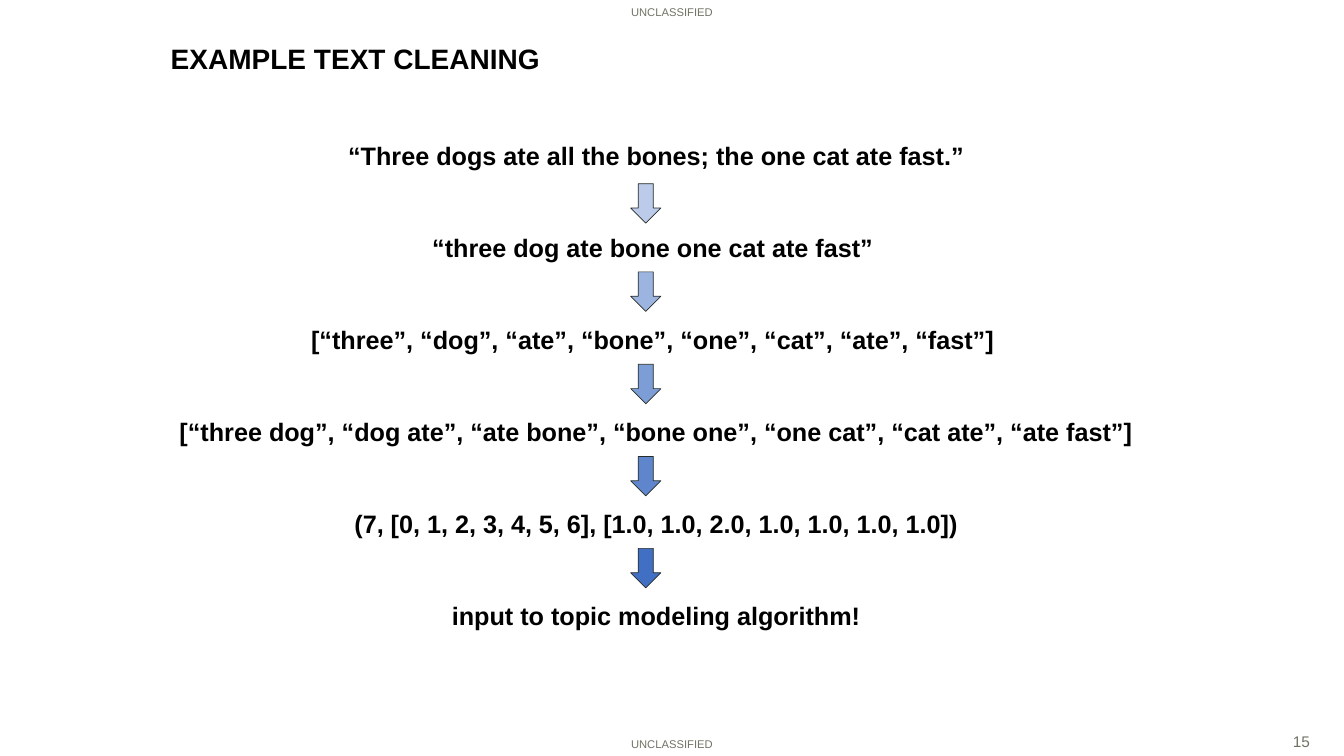
from pptx import Presentation
from pptx.dml.color import RGBColor
from pptx.enum.shapes import MSO_SHAPE
from pptx.enum.text import MSO_ANCHOR as ANCHOR, MSO_AUTO_SIZE as AUTO_SIZE, PP_ALIGN as ALIGN
from pptx.util import Pt

SLIDE_WIDTH, SLIDE_HEIGHT = 960, 540
BLACK, GREY, ARROW_LINE = "000000", "717365", "262C26"

TITLE = "EXAMPLE TEXT CLEANING"
MARKING = "UNCLASSIFIED"
PAGE_NUMBER = "15"
STEPS = [
    "“Three dogs ate all the bones; the one cat ate fast.”",
    "“three dog ate bone one cat ate fast” ",
    "[“three”, “dog”, “ate”, “bone”, “one”, “cat”, “ate”, “fast”] ",
    "[“three dog”, “dog ate”, “ate bone”, “bone one”, “one cat”, “cat ate”, “ate fast”]",
    "(7, [0, 1, 2, 3, 4, 5, 6], [1.0, 1.0, 2.0, 1.0, 1.0, 1.0, 1.0])",
    "input to topic modeling algorithm!",
]
ARROWS = [  # top, fill
    (131.2, "BBCBE9"),
    (194.2, "9CB4E0"),
    (260.2, "7D9DD7"),
    (326, "5F86CD"),
    (391.7, "416FC3"),
]
ARROW_LEFT, ARROW_WIDTH, ARROW_HEIGHT = 450.5, 21.6, 28.2
STEP_SIZE, STEP_GAP = 18, 44.2
MARKING_HEIGHT = 17.3


def color(hex_string):
    return RGBColor.from_string(hex_string)


def write(shape, *lines, size, fill=BLACK, bold=False, align=ALIGN.LEFT,
          anchor=ANCHOR.TOP, gap=0):
    """Put one paragraph per line in the shape, with gap points between them."""
    frame = shape.text_frame
    frame.word_wrap = True
    frame.auto_size = AUTO_SIZE.NONE
    frame.vertical_anchor = anchor
    for index, line in enumerate(lines):
        paragraph = frame.add_paragraph() if index else frame.paragraphs[0]
        paragraph.text = line
        paragraph.alignment = align
        paragraph.space_before = Pt(gap if index else 0)
        font = paragraph.runs[0].font
        font.name, font.size, font.bold = "Arial", Pt(size), bold
        font.color.rgb = color(fill)


def add_text(slide, left, top, width, height, *lines, **style):
    box = slide.shapes.add_textbox(Pt(left), Pt(top), Pt(width), Pt(height))
    write(box, *lines, **style)


def add_arrow(slide, top, fill):
    arrow = slide.shapes.add_shape(MSO_SHAPE.DOWN_ARROW, Pt(ARROW_LEFT), Pt(top),
                                   Pt(ARROW_WIDTH), Pt(ARROW_HEIGHT))
    arrow.shadow.inherit = False
    arrow.fill.solid()
    arrow.fill.fore_color.rgb = color(fill)
    arrow.line.color.rgb = color(ARROW_LINE)
    arrow.line.width = Pt(0.5)


def main():
    presentation = Presentation()
    presentation.slide_width = Pt(SLIDE_WIDTH)
    presentation.slide_height = Pt(SLIDE_HEIGHT)
    slide = presentation.slides.add_slide(presentation.slide_layouts[5])

    for top in (SLIDE_HEIGHT - MARKING_HEIGHT, 0):
        add_text(slide, 0, top, SLIDE_WIDTH, MARKING_HEIGHT, MARKING,
                 size=8, fill=GREY, align=ALIGN.CENTER, anchor=ANCHOR.BOTTOM)
    add_text(slide, 916.4, 519.3, 43.6, 20.7, PAGE_NUMBER, size=11, fill=GREY)

    title = slide.shapes.title
    title.left, title.top, title.width, title.height = Pt(114.7), Pt(21.6), Pt(706), Pt(39.6)
    write(title, TITLE, size=20, bold=True, anchor=ANCHOR.MIDDLE)

    add_text(slide, 34.6, 96.5, 868.3, 371.5, *STEPS, size=STEP_SIZE, bold=True,
             align=ALIGN.CENTER, gap=STEP_GAP)
    for top, fill in ARROWS:
        add_arrow(slide, top, fill)

    presentation.save("out.pptx")


if __name__ == "__main__":
    main()
